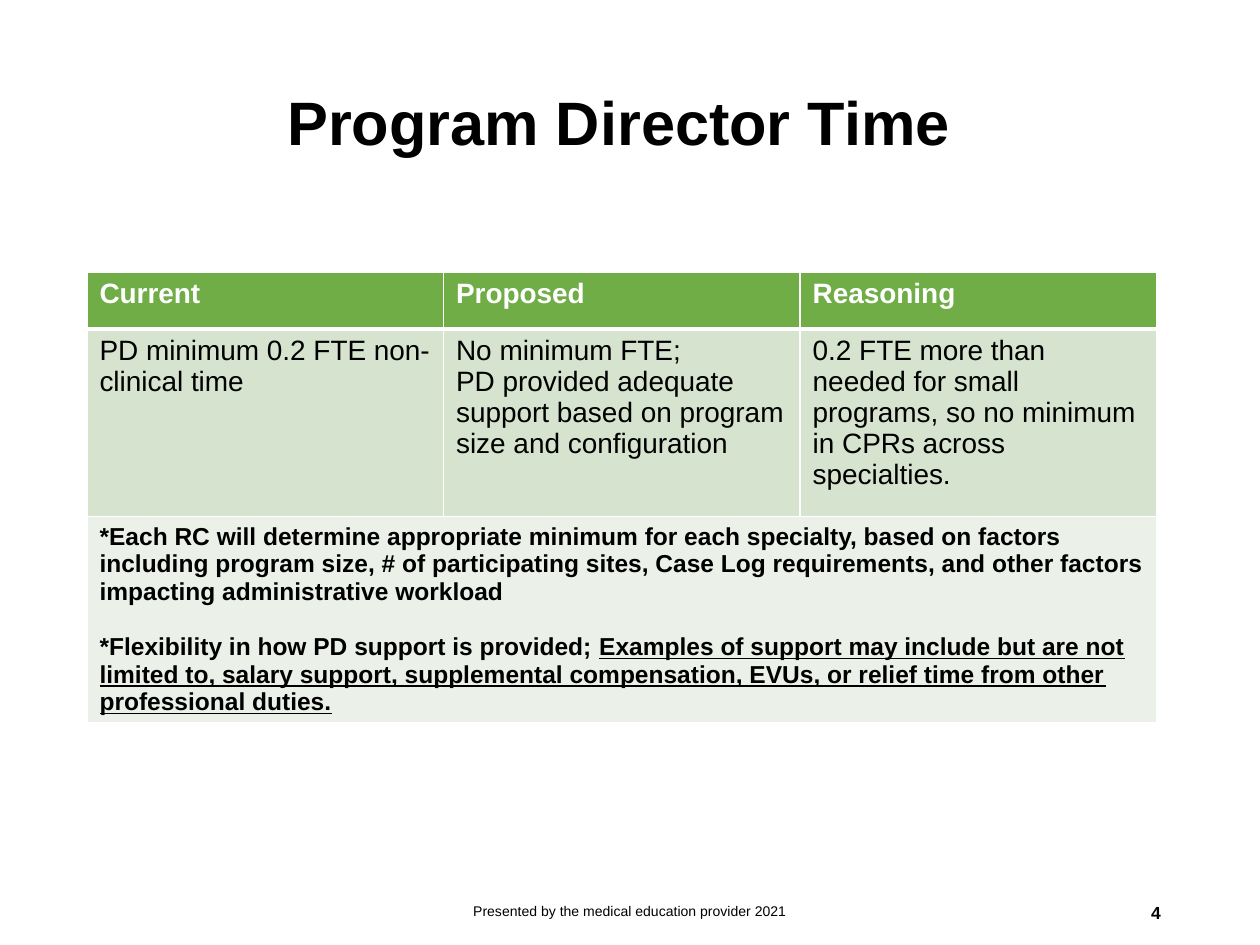
from dataclasses import dataclass

from lxml.etree import SubElement
from pptx import Presentation
from pptx.dml.color import RGBColor as RGB
from pptx.enum.text import MSO_ANCHOR as Anchor, PP_ALIGN as Align
from pptx.oxml.ns import qn
from pptx.util import Inches, Pt


@dataclass(frozen=True)
class Theme:
    font: str = "Arial"
    text: RGB = RGB(0, 0, 0)
    white: RGB = RGB(255, 255, 255)
    header: RGB = RGB(0x70, 0xAD, 0x47)
    band: RGB = RGB(0xD5, 0xE3, 0xCF)
    light_band: RGB = RGB(0xEB, 0xF1, 0xE9)
    title_size: int = 35
    table_size: int = 16
    note_size: int = 14
    footer_size: int = 8
    number_size: int = 10


theme = Theme()


def format_text(paragraph, size, color=theme.text, bold=False):
    paragraph.font.name = theme.font
    paragraph.font.size = Pt(size)
    paragraph.font.bold = bold
    paragraph.font.color.rgb = color


def add_border(cell, side, width):
    line = SubElement(cell._tc.get_or_add_tcPr(), qn(f"a:ln{side}"), w=str(Pt(width)))
    fill = SubElement(line, qn("a:solidFill"))
    SubElement(fill, qn("a:srgbClr"), val=str(theme.white))


presentation = Presentation()
presentation.slide_width = Inches(10)
presentation.slide_height = Inches(7.5)
slide = presentation.slides.add_slide(presentation.slide_layouts[5])

title = slide.shapes.title
title.left, title.top = Inches(2.18), Inches(0.27)
title.width, title.height = Inches(7.14), Inches(1.45)
frame = title.text_frame
frame.text = "Program Director Time"
frame.vertical_anchor = Anchor.MIDDLE
frame.margin_left = frame.margin_right = frame.margin_top = frame.margin_bottom = Inches(0.1)
paragraph = frame.paragraphs[0]
paragraph.alignment = Align.LEFT
paragraph.line_spacing = 0.9
format_text(paragraph, theme.title_size, bold=True)

rows = [
    ["Current", "Proposed", "Reasoning"],
    [
        "PD minimum 0.2 FTE non-clinical time",
        "No minimum FTE;\nPD provided adequate support based on program size and configuration",
        "0.2 FTE more than needed for small programs, so no minimum in CPRs across specialties.",
    ],
    [
        "*Each RC will determine appropriate minimum for each specialty, based on factors "
        "including program size, # of participating sites, Case Log requirements, and other "
        "factors impacting administrative workload\n"
        "*Flexibility in how PD support is provided; ",
        "",
        "",
    ],
]
row_styles = [
    (0.45, theme.header, theme.table_size, theme.white, True),
    (1.49, theme.band, theme.table_size, theme.text, False),
    (1.62, theme.light_band, theme.note_size, theme.text, True),
]

table = slide.shapes.add_table(
    3, 3, Inches(0.69), Inches(2.16), Inches(8.49), Inches(3.56)
).table
for column in table.columns:
    column.width = Inches(2.83)
table.cell(2, 0).merge(table.cell(2, 2))

for row_index, (texts, style) in enumerate(zip(rows, row_styles)):
    height, fill_color, size, color, bold = style
    table.rows[row_index].height = Inches(height)
    for column_index, text in enumerate(texts):
        cell = table.cell(row_index, column_index)
        for side in "LRTB":
            thick = (row_index, side) in [(0, "B"), (1, "T")]
            add_border(cell, side, 3 if thick else 1)
        cell.fill.solid()
        cell.fill.fore_color.rgb = fill_color
        if text:
            cell.text_frame.text = text
            for paragraph in cell.text_frame.paragraphs:
                format_text(paragraph, size, color, bold)

flexibility = table.cell(2, 0).text_frame.paragraphs[1]
flexibility.space_before = Pt(16)
examples = flexibility.add_run()
examples.text = (
    "Examples of support may include but are not limited to, salary support, "
    "supplemental compensation, EVUs, or relief time from other professional duties."
)
examples.font.underline = True

footers = [
    (3.31, 7.03, 3.38, "Presented by the medical education provider 2021",
     Align.CENTER, theme.footer_size, False),
    (7.06, 7.04, 2.25, "4", Align.RIGHT, theme.number_size, True),
]
for left, top, width, text, alignment, size, bold in footers:
    box = slide.shapes.add_textbox(Inches(left), Inches(top), Inches(width), Inches(0.4))
    frame = box.text_frame
    frame.word_wrap = True
    frame.vertical_anchor = Anchor.MIDDLE
    frame.text = text
    frame.paragraphs[0].alignment = alignment
    format_text(frame.paragraphs[0], size, bold=bold)

presentation.save("out.pptx")
